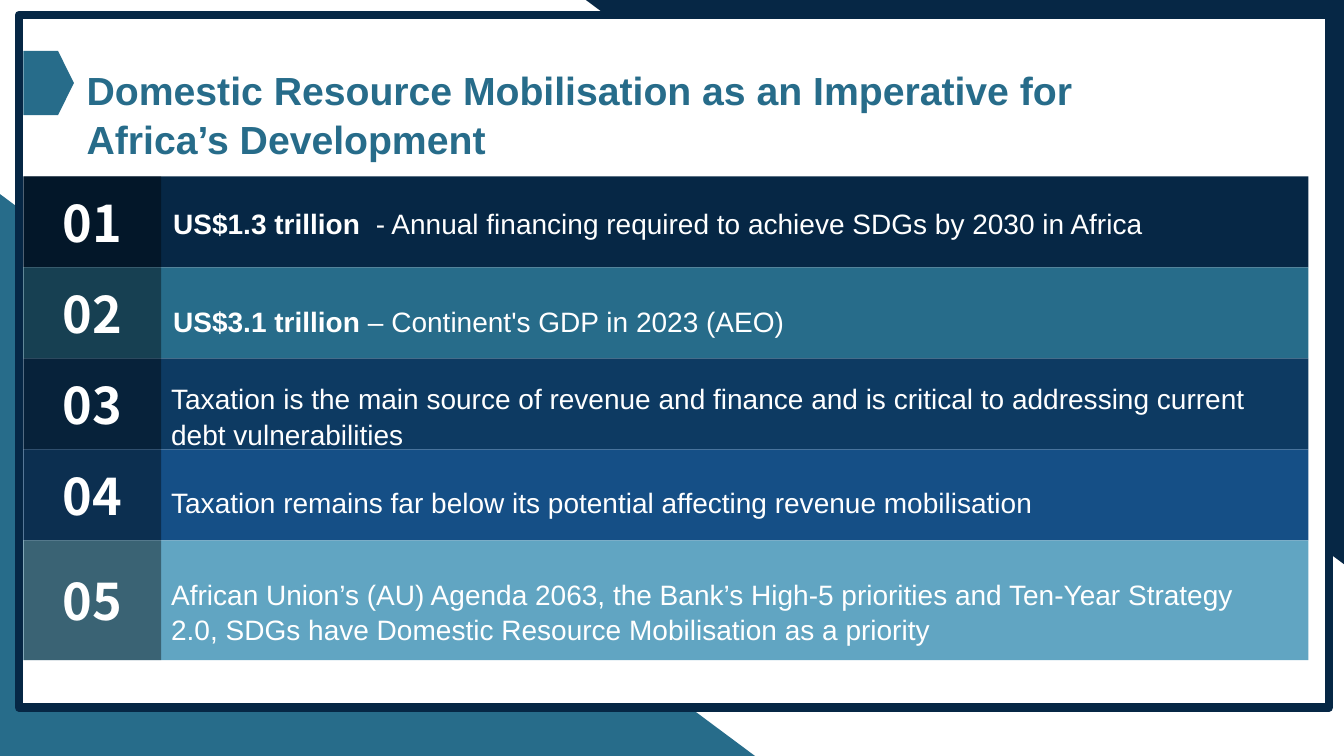
from dataclasses import dataclass

from lxml.etree import SubElement
from pptx import Presentation
from pptx.dml.color import RGBColor
from pptx.enum.shapes import MSO_SHAPE
from pptx.enum.text import MSO_ANCHOR, PP_ALIGN
from pptx.oxml.ns import qn
from pptx.util import Pt

TITLE = "Domestic Resource Mobilisation as an Imperative for Africa’s Development"

# bar colour, bar height, text left, text offset below the bar's top, bold lead, plain text
ROWS = [
    ("062745", 65, 116.6, 16.5, "US$1.3 trillion  ",
     "- Annual financing required to achieve SDGs by 2030 in Africa"),
    ("276C8A", 65, 116.6, 21.5, "US$3.1 trillion", " – Continent's GDP in 2023 (AEO)"),
    ("0D3A62", 65, 115.2, 12, "",
     "Taxation is the main source of revenue and finance and is critical to "
     "addressing current debt vulnerabilities"),
    ("154F86", 65, 115.2, 21, "",
     "Taxation remains far below its potential affecting revenue mobilisation"),
    ("61A5C2", 85.5, 115.2, 21.5, "",
     "African Union’s (AU) Agenda 2063, the Bank’s High-5 priorities and Ten-Year "
     "Strategy 2.0, SDGs have Domestic Resource Mobilisation as a priority"),
]


@dataclass(frozen=True)
class Theme:
    navy: str = "062745"
    teal: str = "276C8A"
    white: str = "FFFFFF"
    black: str = "000000"
    text_font: str = "Arial"
    number_font: str = "Noto Sans CJK SC"
    title_size: float = 28
    number_size: float = 36
    body_size: float = 20
    line_spacing: float = 1.05


THEME = Theme()
BAR_LEFT, BAR_TOP, BAR_WIDTH = 16.8, 126, 917.8
NUMBER_WIDTH = 98.4
TEXT_RIGHT = 921.6


def add_block(slide, kind, left, top, width, height, fill, line=None, opacity=None):
    """Add a filled preset shape; opacity is a percentage."""
    shape = slide.shapes.add_shape(kind, Pt(left), Pt(top), Pt(width), Pt(height))
    shape.shadow.inherit = False
    shape.fill.solid()
    shape.fill.fore_color.rgb = RGBColor.from_string(fill)
    if opacity is not None:
        color = shape.fill._xPr.find(qn("a:solidFill"))[0]
        SubElement(color, qn("a:alpha")).set("val", str(opacity * 1000))
    if line:
        shape.line.color.rgb = RGBColor.from_string(line)
        shape.line.width = Pt(6)
    else:
        shape.line.fill.background()
    return shape


def write_text(shape, *runs, size, color=THEME.white, font=THEME.text_font,
               align=PP_ALIGN.LEFT, anchor=MSO_ANCHOR.TOP, after=0, spacing=1.0):
    """Fill the shape with one paragraph made of (text, bold) runs."""
    frame = shape.text_frame
    frame.word_wrap = True
    frame.vertical_anchor = anchor
    paragraph = frame.paragraphs[0]
    paragraph.alignment = align
    paragraph.line_spacing = spacing
    paragraph.space_before = Pt(0)
    paragraph.space_after = Pt(after)
    for text, bold in runs:
        if text:
            run = paragraph.add_run()
            run.text = text
            run.font.name = font
            run.font.size = Pt(size)
            run.font.bold = bold
            run.font.color.rgb = RGBColor.from_string(color)


def add_backdrop(slide):
    corner = add_block(slide, MSO_SHAPE.RIGHT_TRIANGLE, 418.5, 0, 541.5, 403, THEME.navy)
    corner.rotation = 180
    add_block(slide, MSO_SHAPE.RIGHT_TRIANGLE, -1.5, 137.5, 541.5, 403, THEME.teal)
    add_block(slide, MSO_SHAPE.RECTANGLE, 13.5, 10.8, 936, 494.6, THEME.white, line=THEME.navy)
    marker = add_block(slide, MSO_SHAPE.PENTAGON, BAR_LEFT, 36.3, 36, 46, THEME.teal)
    marker.adjustments[0] = 0.315


def place_title(slide):
    title = slide.shapes.title
    title.left, title.top, title.width, title.height = Pt(54.7), Pt(41.8), Pt(823.7), Pt(74.9)
    write_text(title, (TITLE, True), size=THEME.title_size, color=THEME.teal,
               spacing=THEME.line_spacing)
    slide.shapes._spTree.append(title._element)  # bring in front of the backdrop


def add_rows(slide):
    top = BAR_TOP
    for number, (color, height, left, offset, lead, text) in enumerate(ROWS, 1):
        add_block(slide, MSO_SHAPE.RECTANGLE, BAR_LEFT, top, BAR_WIDTH, height, color)
        badge = add_block(slide, MSO_SHAPE.RECTANGLE, BAR_LEFT, top, NUMBER_WIDTH, height,
                          THEME.black, opacity=40)
        write_text(badge, (f"{number:02d}", True), size=THEME.number_size,
                   font=THEME.number_font, align=PP_ALIGN.CENTER, anchor=MSO_ANCHOR.MIDDLE)
        box = slide.shapes.add_textbox(Pt(left), Pt(top + offset),
                                       Pt(TEXT_RIGHT - left), Pt(height - offset))
        write_text(box, (lead, True), (text, False), size=THEME.body_size, after=12,
                   spacing=THEME.line_spacing)
        top += height


def main():
    presentation = Presentation()
    presentation.slide_width, presentation.slide_height = Pt(960), Pt(540)
    slide = presentation.slides.add_slide(presentation.slide_layouts[5])
    add_backdrop(slide)
    place_title(slide)
    add_rows(slide)
    presentation.save("out.pptx")


if __name__ == "__main__":
    main()
